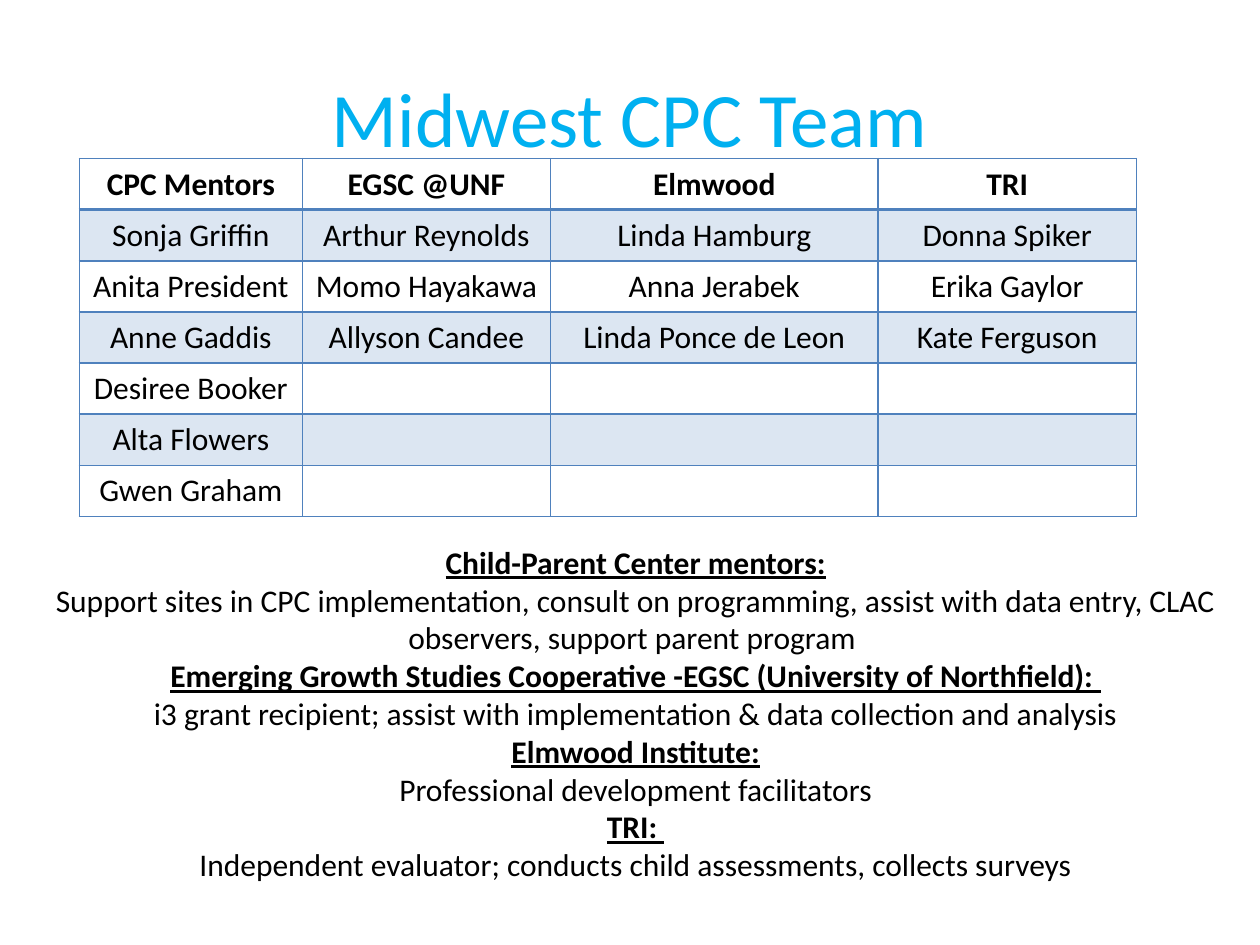
from itertools import zip_longest

from lxml.etree import SubElement
from pptx import Presentation
from pptx.dml.color import RGBColor
from pptx.enum.text import MSO_ANCHOR, MSO_AUTO_SIZE, PP_ALIGN
from pptx.oxml.ns import qn
from pptx.util import Inches, Pt

TITLE = "Midwest CPC Team"
TEAMS = {
    "CPC Mentors": ["Sonja Griffin", "Anita President", "Anne Gaddis",
                    "Desiree Booker", "Alta Flowers", "Gwen Graham"],
    "EGSC @UNF": ["Arthur Reynolds", "Momo Hayakawa", "Allyson Candee"],
    "Elmwood": ["Linda Hamburg", "Anna Jerabek", "Linda Ponce de Leon"],
    "TRI": ["Donna Spiker", "Erika Gaylor", "Kate Ferguson"],
}
ROLES = [
    ("Child-Parent Center mentors:",
     "Support sites in CPC implementation, consult on programming, assist with "
     "data entry, CLAC observers, support parent program "),
    ("Emerging Growth Studies Cooperative -EGSC (University of Northfield): ",
     "i3 grant recipient; assist with implementation & data collection and analysis"),
    ("Elmwood Institute:", "Professional development facilitators"),
    ("TRI: ", "Independent evaluator; conducts child assessments, collects surveys"),
]
COLUMN_WIDTHS = [1.77, 1.97, 2.6, 2.05]
TABLE_HEIGHT = 2.84
BLUE, BAND, WHITE, BLACK, SKY = "4F81BD", "DCE6F2", "FFFFFF", "000000", "00B0F0"
BODY = {"name": "Calibri", "size": Pt(18), "bold": False, "underline": False}


def color(value):
    return RGBColor.from_string(value)


def write(para, text, hue=BLACK, **changes):
    """Fill a paragraph with one centred span in the body format plus changes."""
    para.alignment = PP_ALIGN.CENTER
    span = para.add_run()
    span.text = text
    for name, value in {**BODY, **changes}.items():
        setattr(span.font, name, value)
    span.font.color.rgb = color(hue)


def set_borders(cell, bottom):
    """Draw 1 pt blue borders, with the bottom one of the given width."""
    properties = cell._tc.get_or_add_tcPr()
    widths = {"a:lnL": 1, "a:lnR": 1, "a:lnT": 1, "a:lnB": bottom}
    for position, (tag, width) in enumerate(widths.items()):
        line = SubElement(properties, qn(tag), w=str(Pt(width)))
        SubElement(SubElement(line, qn("a:solidFill")), qn("a:srgbClr"), val=BLUE)
        properties.insert(position, line)


def add_title(page):
    title = page.shapes.title
    title.left, title.top = Inches(0.5), Inches(0.3)
    title.width, title.height = Inches(9), Inches(1.25)
    title.text_frame.vertical_anchor = MSO_ANCHOR.MIDDLE
    write(title.text_frame.paragraphs[0], TITLE, SKY, size=Pt(44))


def add_team_table(page):
    rows = [list(TEAMS), *zip_longest(*TEAMS.values(), fillvalue="")]
    table = page.shapes.add_table(
        len(rows), len(TEAMS), Inches(0.63), Inches(1.26),
        Inches(sum(COLUMN_WIDTHS)), Inches(TABLE_HEIGHT)).table
    for column, width in zip(table.columns, COLUMN_WIDTHS):
        column.width = Inches(width)
    for r, names in enumerate(rows):
        table.rows[r].height = Inches(TABLE_HEIGHT / len(rows))
        for c, name in enumerate(names):
            cell = table.cell(r, c)
            cell.fill.solid()
            cell.fill.fore_color.rgb = color(BAND if r % 2 else WHITE)
            set_borders(cell, bottom=2 if r == 0 else 1)
            if name:
                write(cell.text_frame.paragraphs[0], name, bold=r == 0)


def add_roles(page):
    box = page.shapes.add_textbox(Inches(0.17), Inches(4.26), Inches(9.75), Inches(2.83))
    frame = box.text_frame
    frame.word_wrap = True
    frame.auto_size = MSO_AUTO_SIZE.SHAPE_TO_FIT_TEXT
    for number, (heading, duty) in enumerate(ROLES):
        para = frame.add_paragraph() if number else frame.paragraphs[0]
        write(para, heading, bold=True, underline=True)
        write(frame.add_paragraph(), duty)


def main():
    deck = Presentation()
    deck.slide_width, deck.slide_height = Inches(10), Inches(7.5)
    page = deck.slides.add_slide(deck.slide_layouts[5])
    add_title(page)
    add_team_table(page)
    add_roles(page)
    deck.save("out.pptx")


if __name__ == "__main__":
    main()
